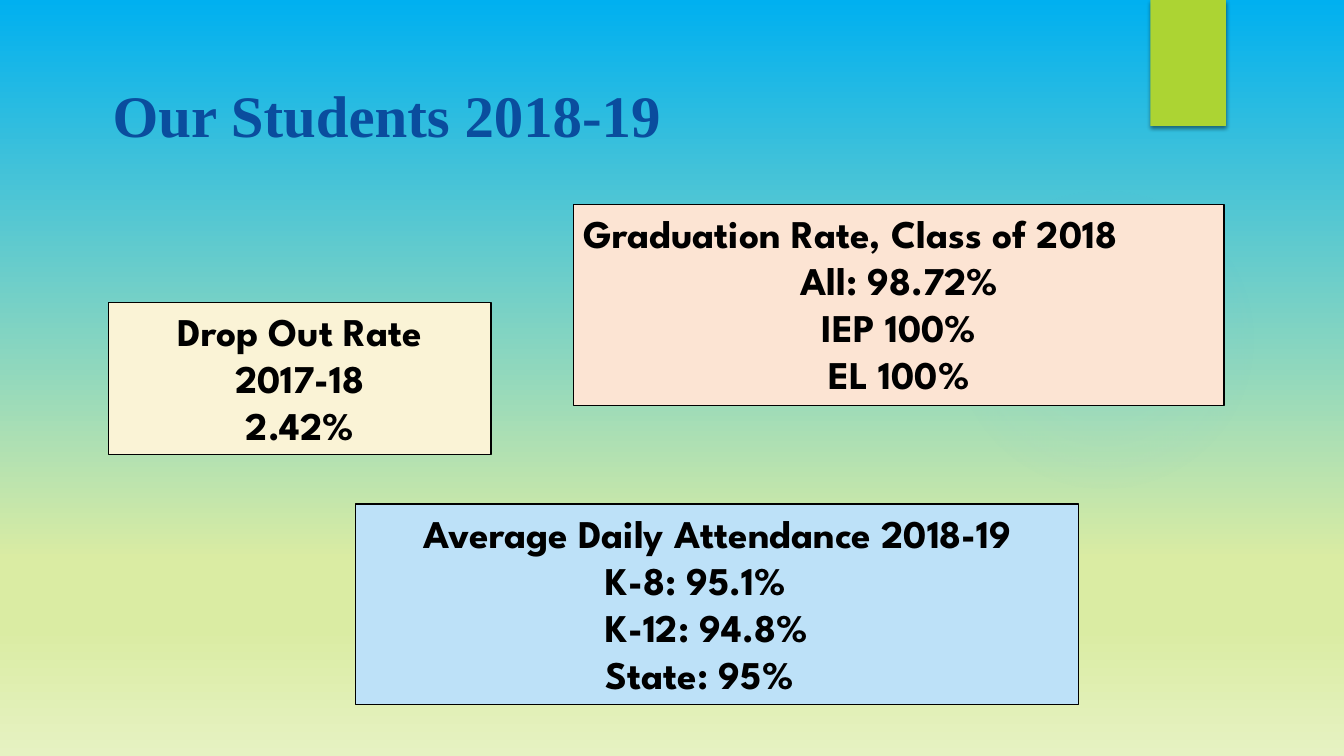
"""Build the student outcomes slide with its three rate cards."""
from pptx import Presentation
from pptx import oxml
from pptx import util as u
from pptx.dml.color import RGBColor
from pptx.enum import shapes, text
from pptx.oxml import ns

BLACK = RGBColor(0x00, 0x00, 0x00)
TITLE_BLUE = RGBColor(0x0A, 0x4D, 0x9E)
LIME = RGBColor(0xAC, 0xD4, 0x33)
PEACH = RGBColor(0xFC, 0xE4, 0xD3)
CREAM = RGBColor(0xFA, 0xF3, 0xD6)
PALE_BLUE = RGBColor(0xBD, 0xE1, 0xF8)
SKY = RGBColor(0x00, 0xB0, 0xF0)
MEADOW = RGBColor(0xDA, 0xEC, 0xA3)
PALE_MEADOW = RGBColor(0xE6, 0xF2, 0xC2)
GLOW = RGBColor(0x7A, 0xC4, 0xF0)

DOWNWARD = '<a:lin ang="5400000" scaled="0"/>'
RADIAL = ('<a:path path="circle">'
          '<a:fillToRect l="50000" t="50000" r="50000" b="50000"/></a:path>')
CENTER = text.PP_ALIGN.CENTER
LEFT = text.PP_ALIGN.LEFT


class SlideBuilder:
    title_font = "Times New Roman"
    card_font = "League Spartan"

    def __init__(self, presentation):
        self.slide = presentation.slides.add_slide(presentation.slide_layouts[5])

    def gradient(self, properties, stops, direction):
        stop_xml = "".join(
            f'<a:gs pos="{position * 1000}"><a:srgbClr val="{color}">'
            f'<a:alpha val="{opacity * 1000}"/></a:srgbClr></a:gs>'
            for position, color, opacity in stops)
        fill = oxml.parse_xml(
            f'<a:gradFill {ns.nsdecls("a")} rotWithShape="1">'
            f'<a:gsLst>{stop_xml}</a:gsLst>{direction}</a:gradFill>')
        properties.replace(properties.find(ns.qn("a:solidFill")), fill)

    def background(self, stops):
        self.slide.background.fill.solid()
        properties = self.slide.element.find(".//" + ns.qn("p:bgPr"))
        self.gradient(properties, stops, DOWNWARD)

    def shape(self, kind, box, color):
        shape = self.slide.shapes.add_shape(kind, *map(u.Inches, box))
        shape.shadow.inherit = False
        shape.fill.solid()
        shape.fill.fore_color.rgb = color
        shape.line.fill.background()
        return shape

    def glow(self, box, stops):
        shape = self.shape(shapes.MSO_SHAPE.OVAL, box, GLOW)
        self.gradient(shape.element.spPr, stops, RADIAL)

    def tab(self, box, color):
        shape = self.shape(shapes.MSO_SHAPE.RECTANGLE, box, color)
        effects = shape.element.spPr.find(ns.qn("a:effectLst"))
        effects.append(oxml.parse_xml(
            f'<a:outerShdw {ns.nsdecls("a")} blurRad="38100" dist="25400" '
            'dir="5400000" rotWithShape="0"><a:srgbClr val="000000">'
            '<a:alpha val="45000"/></a:srgbClr></a:outerShdw>'))

    def format_paragraph(self, paragraph, font_name, size, color, alignment):
        paragraph.alignment = alignment
        for run in paragraph.runs:
            run.font.name = font_name
            run.font.size = u.Pt(size)
            run.font.bold = True
            run.font.color.rgb = color

    def title(self, box, wording):
        title = self.slide.shapes.title
        title.left, title.top, title.width, title.height = map(u.Inches, box)
        frame = title.text_frame
        frame.text = wording
        frame.vertical_anchor = text.MSO_ANCHOR.MIDDLE
        self.format_paragraph(frame.paragraphs[0], self.title_font, 42,
                              TITLE_BLUE, CENTER)

    def card(self, box, color, lines, heading=CENTER, body=CENTER, indent=0):
        shape = self.shape(shapes.MSO_SHAPE.RECTANGLE, box, color)
        shape.line.color.rgb = BLACK
        shape.line.width = u.Pt(0.75)
        frame = shape.text_frame
        frame.text = "\n".join(lines)
        frame.word_wrap = True
        frame.auto_size = text.MSO_AUTO_SIZE.SHAPE_TO_FIT_TEXT
        frame.vertical_anchor = text.MSO_ANCHOR.TOP
        for index, paragraph in enumerate(frame.paragraphs):
            alignment = body if index else heading
            self.format_paragraph(paragraph, self.card_font, 28, BLACK, alignment)
            if index and indent:
                properties = paragraph._p.get_or_add_pPr()
                properties.set("marL", str(u.Inches(indent)))
                properties.set("indent", "0")


def main():
    presentation = Presentation()
    presentation.slide_width = u.Inches(13.33)
    presentation.slide_height = u.Inches(7.5)
    builder = SlideBuilder(presentation)
    builder.background([(0, SKY, 100), (74, MEADOW, 100),
                        (83, MEADOW, 100), (100, PALE_MEADOW, 100)])
    builder.glow((9.41, 1.83, 3.08, 3.08),
                 [(0, GLOW, 7), (36, GLOW, 6), (69, GLOW, 0)])
    builder.tab((11.41, 0, 0.75, 1.25), LIME)
    builder.title((0.78, 0.71, 6.11, 0.84), "Our Students 2018-19")
    builder.card((5.69, 2.03, 6.45, 1.99), PEACH,
                 ["Graduation Rate, Class of 2018", "All: 98.72%",
                  "IEP 100%", "EL 100%"], heading=LEFT)
    builder.card((1.08, 3, 3.79, 1.51), CREAM,
                 ["Drop Out Rate", "2017-18", "2.42%"])
    builder.card((3.53, 5, 7.17, 1.99), PALE_BLUE,
                 ["Average Daily Attendance 2018-19", "K-8: 95.1%",
                  "K-12: 94.8%", "State: 95%"], body=LEFT, indent=2.38)
    presentation.save("out.pptx")


if __name__ == "__main__":
    main()
